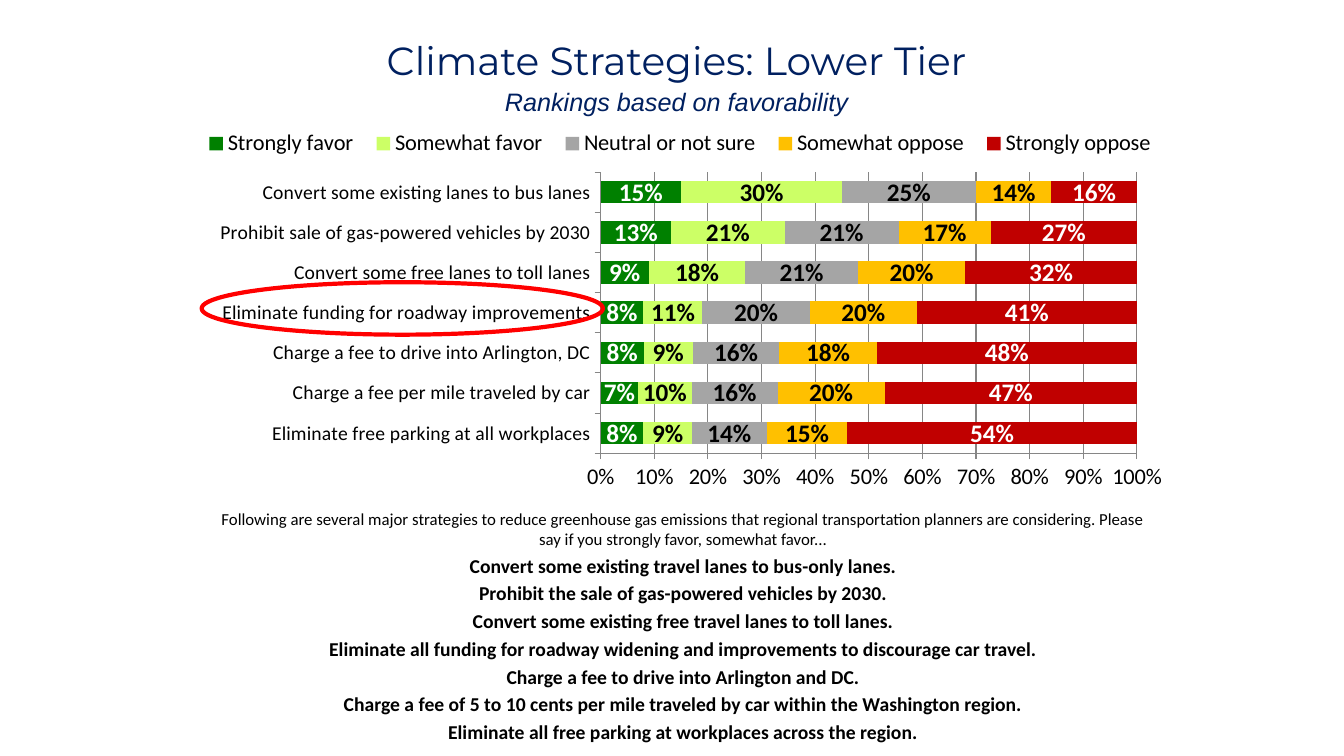
from lxml import etree
from pptx import Presentation
from pptx.chart.data import CategoryChartData
from pptx.dml.color import RGBColor
from pptx.enum.chart import XL_CHART_TYPE, XL_LABEL_POSITION, XL_LEGEND_POSITION
from pptx.enum.chart import XL_TICK_LABEL_POSITION, XL_TICK_MARK
from pptx.enum.shapes import MSO_SHAPE
from pptx.enum.text import MSO_ANCHOR, PP_ALIGN
from pptx.oxml.ns import qn
from pptx.util import Inches, Pt

COLORS = {
    "navy": "002060", "black": "000000", "white": "FFFFFF", "ring": "FF0000",
    "axis": "868686", "green": "008000", "lime": "CCFF66", "gray": "A5A5A5",
    "amber": "FFC000", "red": "C00000",
}
STRATEGIES = [
    "Eliminate free parking at all workplaces",
    "Charge a fee per mile traveled by car",
    "Charge a fee to drive into Arlington, DC",
    "Eliminate funding for roadway improvements",
    "Convert some free lanes to toll lanes",
    "Prohibit sale of gas-powered vehicles by 2030",
    "Convert some existing lanes to bus lanes",
]
RATINGS = [
    ("Strongly favor", "green", "white", [0.08, 0.07, 0.08, 0.08, 0.09, 0.13, 0.15]),
    ("Somewhat favor", "lime", "black", [0.09, 0.1, 0.09, 0.11, 0.18, 0.21, 0.3]),
    ("Neutral or not sure", "gray", "black", [0.14, 0.16, 0.16, 0.2, 0.21, 0.21, 0.25]),
    ("Somewhat oppose", "amber", "black", [0.15, 0.2, 0.18, 0.2, 0.2, 0.17, 0.14]),
    ("Strongly oppose", "red", "white", [0.54, 0.47, 0.48, 0.41, 0.32, 0.27, 0.16]),
]
QUESTION = (
    "Following are several major strategies to reduce greenhouse gas emissions that regional "
    "transportation planners are considering. Please say if you strongly favor, somewhat favor..."
)
ITEMS = [
    "Convert some existing travel lanes to bus-only lanes.",
    "Prohibit the sale of gas-powered vehicles by 2030.",
    "Convert some existing free travel lanes to toll lanes.",
    "Eliminate all funding for roadway widening and improvements to discourage car travel.",
    "Charge a fee to drive into Arlington and DC.",
    "Charge a fee of 5 to 10 cents per mile traveled by car within the Washington region.",
    "Eliminate all free parking at workplaces across the region.",
]


def rgb(name):
    """Return the named palette colour."""
    return RGBColor.from_string(COLORS[name])


def set_font(font, size, color="black", name="Calibri", bold=False, italic=False):
    """Apply the character format to a font."""
    font.size, font.name, font.bold, font.italic = Pt(size), name, bold, italic
    font.color.rgb = rgb(color)


def add_box(page, left, top, width, height):
    """Add a wrapping text box and return its frame."""
    box = page.shapes.add_textbox(Inches(left), Inches(top), Inches(width), Inches(height))
    box.text_frame.word_wrap = True
    return box.text_frame


def add_text(frame, text, spacing=1.0, before=0, **style):
    """Write a centred paragraph, using the first one while it is empty."""
    para = frame.paragraphs[0]
    if para.runs:
        para = frame.add_paragraph()
    para.alignment = PP_ALIGN.CENTER
    para.line_spacing = spacing
    para.space_before = Pt(before)
    span = para.add_run()
    span.text = text
    set_font(span.font, **style)


def add_title(page):
    """Add the title and subtitle."""
    frame = add_box(page, 2, 0.42, 9.42, 0.62)
    frame.vertical_anchor = MSO_ANCHOR.MIDDLE
    frame.margin_left = frame.margin_right = Inches(0.07)
    frame.margin_top = frame.margin_bottom = Inches(0.04)
    add_text(frame, "Climate Strategies: Lower Tier", spacing=1.1,
             size=28, color="navy", name="Montserrat")
    add_text(frame, "Rankings based on favorability", spacing=1.1,
             size=18, color="navy", name="Arial", italic=True)


def add_question(page):
    """Add the survey question and its items."""
    frame = add_box(page, 2, 5, 9.55, 2.45)
    add_text(frame, QUESTION, size=12)
    for item in ITEMS:
        add_text(frame, item, before=3, size=14, bold=True)


def set_layout(element, index, **settings):
    """Fix a chart part's place as fractions of the chart."""
    for old in element.findall(qn("c:layout")):
        element.remove(old)
    layout = etree.Element(qn("c:layout"))
    element.insert(index, layout)
    manual = etree.SubElement(layout, qn("c:manualLayout"))
    for tag, value in settings.items():
        etree.SubElement(manual, qn(f"c:{tag}")).set("val", str(value))


def format_axis(axis, size):
    """Style an axis line, its ticks and its labels."""
    axis.major_tick_mark = XL_TICK_MARK.OUTSIDE
    axis.minor_tick_mark = XL_TICK_MARK.NONE
    axis.format.line.color.rgb = rgb("axis")
    axis.format.line.width = Pt(0.75)
    set_font(axis.tick_labels.font, size)


def format_series(series, fill, label):
    """Colour a series and label its values."""
    series.format.fill.solid()
    series.format.fill.fore_color.rgb = rgb(fill)
    labels = series.data_labels
    labels.show_value = True
    labels.number_format, labels.number_format_is_linked = "0%", False
    labels.position = XL_LABEL_POSITION.CENTER
    set_font(labels.font, 18, label, bold=True)


def add_legend(chart):
    """Add a one-line legend across the top of the chart."""
    chart.has_legend = True
    legend = chart.legend
    legend.position = XL_LEGEND_POSITION.TOP
    legend.include_in_layout = False
    set_font(legend.font, 16)
    set_layout(legend._element, 1, xMode="edge", yMode="edge", x=0.01, y=0.02, w=0.98, h=0.09)


def add_ratings_chart(page):
    """Add the stacked bars of ratings by strategy."""
    data = CategoryChartData(number_format="0%")
    data.categories = STRATEGIES
    for name, _, _, values in RATINGS:
        data.add_series(name, values)
    chart = page.shapes.add_chart(
        XL_CHART_TYPE.BAR_STACKED_100, Inches(1.82), Inches(1.18),
        Inches(9.85), Inches(3.77), data).chart
    set_font(chart.font, 18)
    chart.has_title = False
    add_legend(chart)
    plot = chart.plots[0]
    plot.gap_width, plot.overlap, plot.vary_by_categories = 78, 100, False
    for series, (_, fill, label, _) in zip(plot.series, RATINGS):
        format_series(series, fill, label)
    format_axis(chart.category_axis, 14)
    chart.category_axis.tick_label_position = XL_TICK_LABEL_POSITION.LOW
    scale = chart.value_axis
    format_axis(scale, 16)
    scale.minimum_scale, scale.maximum_scale, scale.major_unit = 0, 1, 0.1
    scale.tick_labels.number_format = "0%"
    scale.tick_labels.number_format_is_linked = False
    scale.has_major_gridlines = True
    scale.major_gridlines.format.line.color.rgb = rgb("axis")
    scale.major_gridlines.format.line.width = Pt(0.75)
    set_layout(chart._chartSpace.chart.plotArea, 0, layoutTarget="inner",
               xMode="edge", yMode="edge", x=0.42, y=0.14, w=0.54, h=0.74)


def add_ring(page, left, top, width, height):
    """Circle an area with an unfilled ellipse."""
    ring = page.shapes.add_shape(
        MSO_SHAPE.OVAL, Inches(left), Inches(top), Inches(width), Inches(height))
    ring.shadow.inherit = False
    ring.fill.background()
    ring.line.color.rgb = rgb("ring")
    ring.line.width = Pt(3)


def main():
    """Build the slide and save it."""
    deck = Presentation()
    deck.slide_width, deck.slide_height = Inches(13.33), Inches(7.5)
    page = deck.slides.add_slide(deck.slide_layouts[6])
    add_title(page)
    add_question(page)
    add_ratings_chart(page)
    add_ring(page, 2, 2.8, 3.98, 0.52)
    deck.save("out.pptx")


if __name__ == "__main__":
    main()
